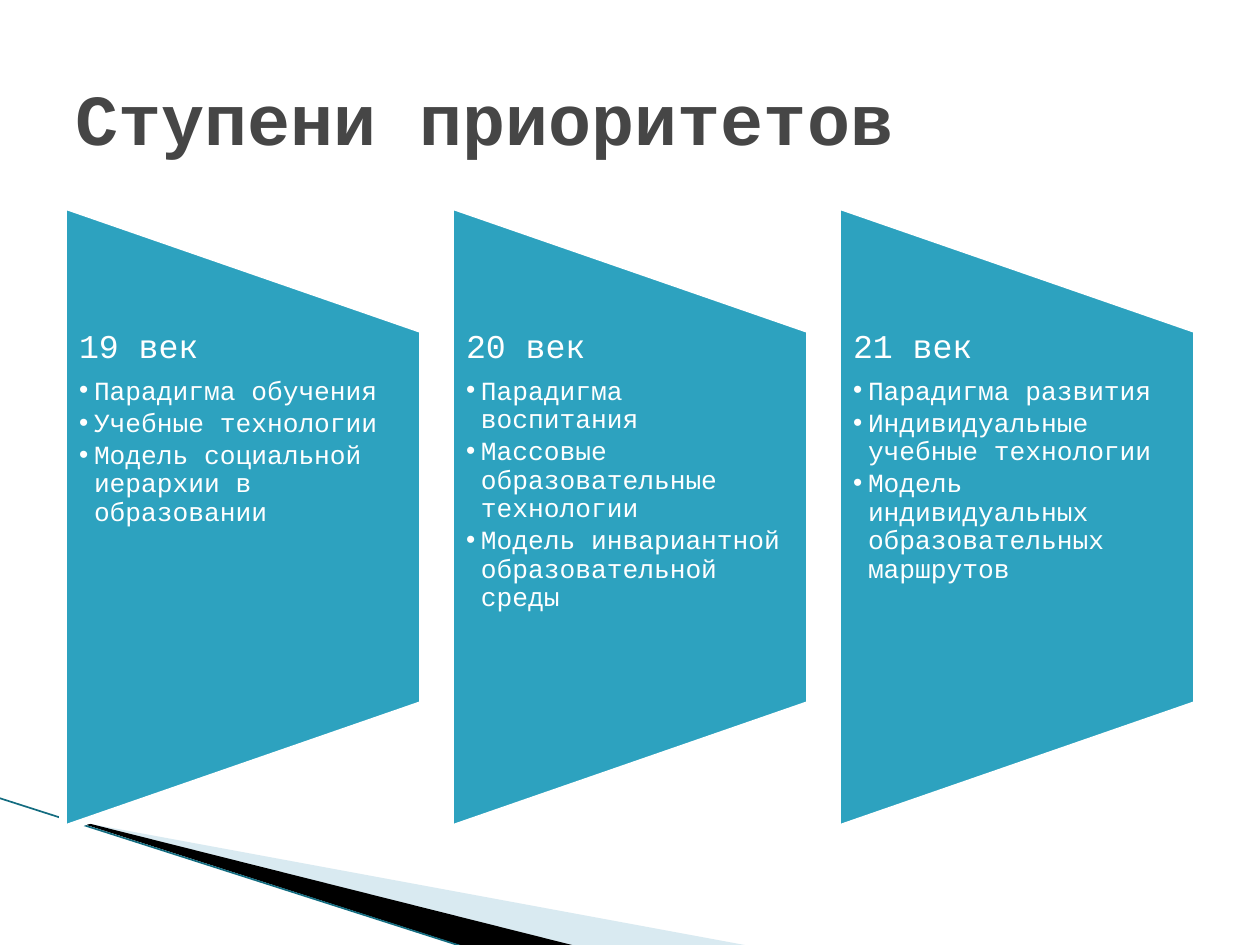
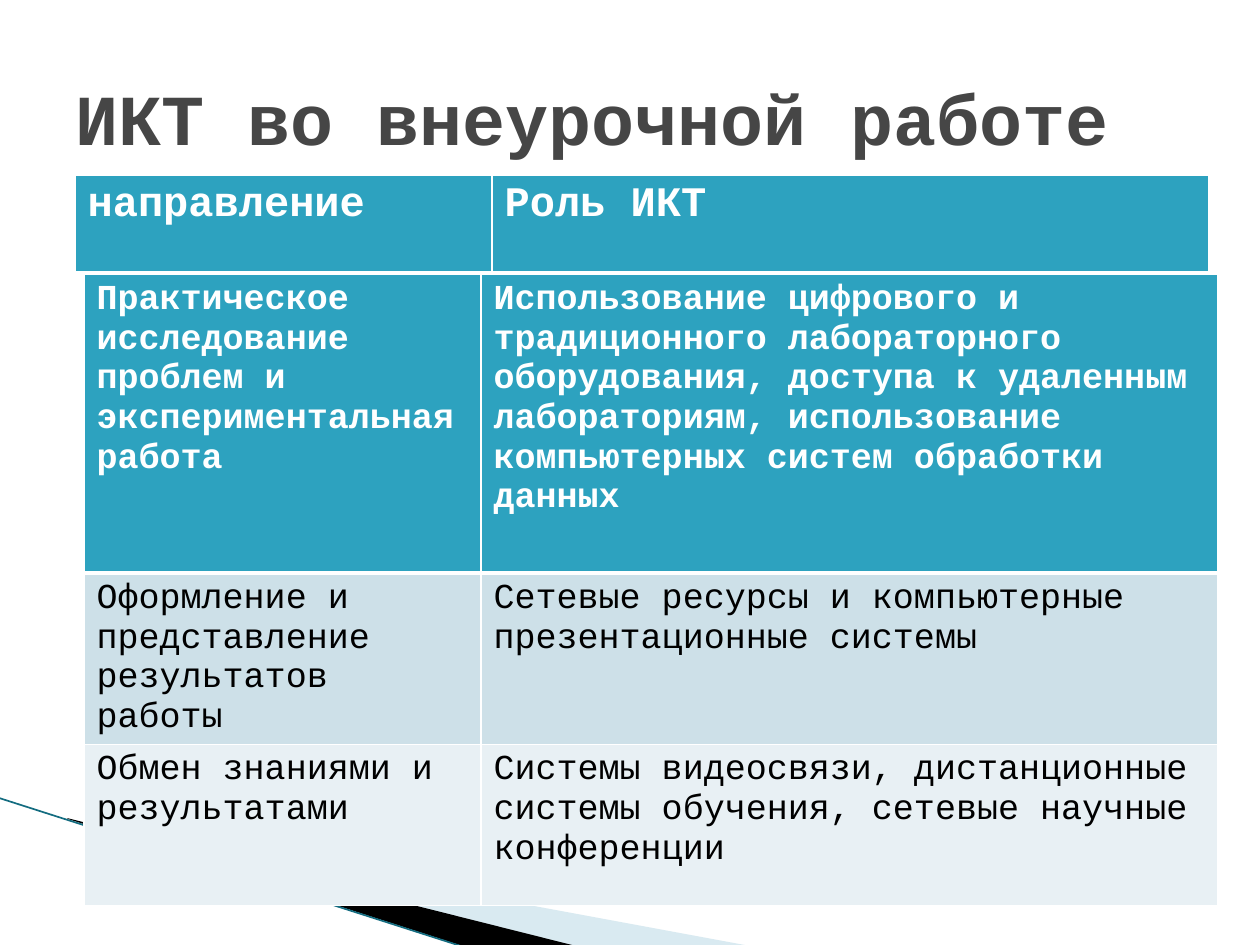
from lxml import etree
from pptx import Presentation
from pptx import util as u
from pptx.dml.color import RGBColor
from pptx.enum import shapes, text
from pptx.oxml.ns import qn

PX = 914400 / 126
FONT = "Courier New"
COLORS = {
    "title": "464646", "teal": "2DA2BF", "white": "FFFFFF", "black": "000000",
    "wedge": "A0CBDC", "stripe": "136C80", "band_dark": "CDE0E8", "band_light": "E8F0F4",
}
TITLE_BOX = (63, 38, 1134, 157)
STAGES_BOX = (63, 205, 1134, 624)
HEADER_BOX = (75, 175, 1134, 98)
ROLES_BOX = (84, 274, 1134, 625)

STAGES = [
    ("19 век", ["Парадигма обучения", "Учебные технологии",
                "Модель социальной иерархии в образовании"]),
    ("20 век", ["Парадигма воспитания", "Массовые образовательные технологии",
                "Модель инвариантной образовательной среды"]),
    ("21 век", ["Парадигма развития", "Индивидуальные учебные технологии",
                "Модель индивидуальных образовательных маршрутов"]),
]
ROLES = [
    ("Практическое исследование проблем и экспериментальная работа",
     "Использование цифрового и традиционного лабораторного оборудования, доступа к "
     "удаленным лабораториям, использование компьютерных систем обработки данных"),
    ("Оформление и представление результатов работы",
     "Сетевые ресурсы и компьютерные презентационные системы"),
    ("Обмен знаниями и результатами",
     "Системы видеосвязи, дистанционные системы обучения, сетевые научные конференции"),
]


def px(*lengths):
    return [u.Emu(round(n * PX)) for n in lengths]


def rgb(name):
    return RGBColor.from_string(COLORS[name])


def style(paragraph, size, color, bold=False):
    for run in paragraph.runs:
        run.font.name, run.font.size, run.font.bold = FONT, u.Pt(size), bold
        run.font.color.rgb = rgb(color)


def add_wedge(slide, points, color, opacity=100):
    builder = slide.shapes.build_freeform(*points[0], scale=PX)
    builder.add_line_segments(points[1:], close=True)
    wedge = builder.convert_to_shape()
    wedge.shadow.inherit = False
    wedge.fill.solid()
    wedge.fill.fore_color.rgb = rgb(color)
    wedge.line.fill.background()
    if opacity < 100:
        tint = wedge.fill._xPr.find(".//" + qn("a:srgbClr"))
        etree.SubElement(tint, qn("a:alpha"), val=str(opacity * 1000))


def add_corner(slide):
    """Wedges and stripe in the lower left corner."""
    add_wedge(slide, [(69, 820), (750, 946), (575, 946), (69, 819)], "wedge", 40)
    add_wedge(slide, [(67, 818), (576, 946), (469, 948), (68, 819)], "black")
    stripe = slide.shapes.add_connector(shapes.MSO_CONNECTOR.STRAIGHT, *px(-1, 798, 467, 948))
    stripe.line.color.rgb = rgb("stripe")
    stripe.line.width = u.Pt(0.95)
    etree.SubElement(stripe._element.spPr, qn("a:effectLst"))


def add_title(slide, box, wording):
    frame = slide.shapes.add_textbox(*px(*box)).text_frame
    frame.word_wrap = True
    frame.vertical_anchor = text.MSO_ANCHOR.MIDDLE
    frame.text = wording
    style(frame.paragraphs[0], 41, "title", True)


def add_bullet(paragraph, indent):
    props = paragraph._p.get_or_add_pPr()
    props.set("marL", str(indent))
    props.set("indent", str(-indent))
    etree.SubElement(props, qn("a:buFont"), typeface="Arial")
    etree.SubElement(props, qn("a:buChar"), char="•")


def add_stage(slide, box, century, points):
    left, top, width, height = box
    # Panel: a trapezoid turned a quarter to the left
    panel = slide.shapes.add_shape(
        shapes.MSO_SHAPE.FLOWCHART_MANUAL_OPERATION,
        *px(left + (width - height) / 2, top + (height - width) / 2, height, width))
    panel.rotation = 270
    panel.shadow.inherit = False
    panel.fill.solid()
    panel.fill.fore_color.rgb = rgb("teal")
    panel.line.color.rgb = rgb("white")
    panel.line.width = u.Pt(4.33)

    # Century and its points, in the middle three fifths
    frame = slide.shapes.add_textbox(*px(left, top + height / 5, width, height * 3 / 5)).text_frame
    frame.word_wrap = True
    frame.margin_left = frame.margin_right = px(16)[0]
    frame.margin_top = frame.margin_bottom = 0
    frame.text = century
    for point in points:
        paragraph = frame.add_paragraph()
        paragraph.text = point
        add_bullet(paragraph, px(15)[0])
    for number, paragraph in enumerate(frame.paragraphs):
        size, after = (15, 2.25) if number else (19, 6.65)
        paragraph.line_spacing = 0.9
        paragraph.space_after = u.Pt(after)
        style(paragraph, size, "white")


def add_stages(slide, box, gap=27):
    left, top, width, height = box
    panel_width = (width - (len(STAGES) - 1) * gap) / len(STAGES)
    for number, (century, points) in enumerate(STAGES):
        stage_left = left + number * (panel_width + gap)
        add_stage(slide, (stage_left, top, panel_width, height), century, points)


def add_borders(cell, bottom):
    props = cell._tc.get_or_add_tcPr()
    for side, width in (("L", 1), ("R", 1), ("T", 1), ("B", bottom)):
        line = etree.SubElement(props, qn("a:ln" + side), w=str(u.Pt(width)))
        fill = etree.SubElement(line, qn("a:solidFill"))
        etree.SubElement(fill, qn("a:srgbClr"), val=COLORS["white"])


def add_grid(slide, box, rows, first_width, heights, size):
    """Table whose first row is a heading and whose other rows are banded."""
    table = slide.shapes.add_table(len(rows), 2, *px(*box)).table
    table.first_row = table.horz_banding = False
    for column, width in zip(table.columns, px(first_width, box[2] - first_width)):
        column.width = width
    for number, (row, height) in enumerate(zip(table.rows, px(*heights))):
        row.height = height
        heading = number == 0
        band = "teal" if heading else ("band_light", "band_dark")[number % 2]
        for cell, wording in zip(row.cells, rows[number]):
            add_borders(cell, 3 if heading else 1)
            cell.fill.solid()
            cell.fill.fore_color.rgb = rgb(band)
            cell.text = wording
            style(cell.text_frame.paragraphs[0], size, "white" if heading else "black", heading)


def start_slide(deck):
    slide = deck.slides.add_slide(deck.slide_layouts[6])
    add_corner(slide)
    return slide


def build_priorities(deck):
    slide = start_slide(deck)
    add_stages(slide, STAGES_BOX)
    add_title(slide, TITLE_BOX, "Ступени приоритетов")


def build_activities(deck):
    slide = start_slide(deck)
    add_grid(slide, ROLES_BOX, ROLES, 397, (299, 165, 161), 20)
    add_title(slide, TITLE_BOX, "ИКТ во внеурочной работе")
    add_grid(slide, HEADER_BOX, [("направление", "Роль ИКТ")], 417, (98,), 24)


def main():
    deck = Presentation()
    deck.slide_width, deck.slide_height = px(1260, 945)
    build_priorities(deck)
    build_activities(deck)
    deck.save("out.pptx")


if __name__ == "__main__":
    main()
